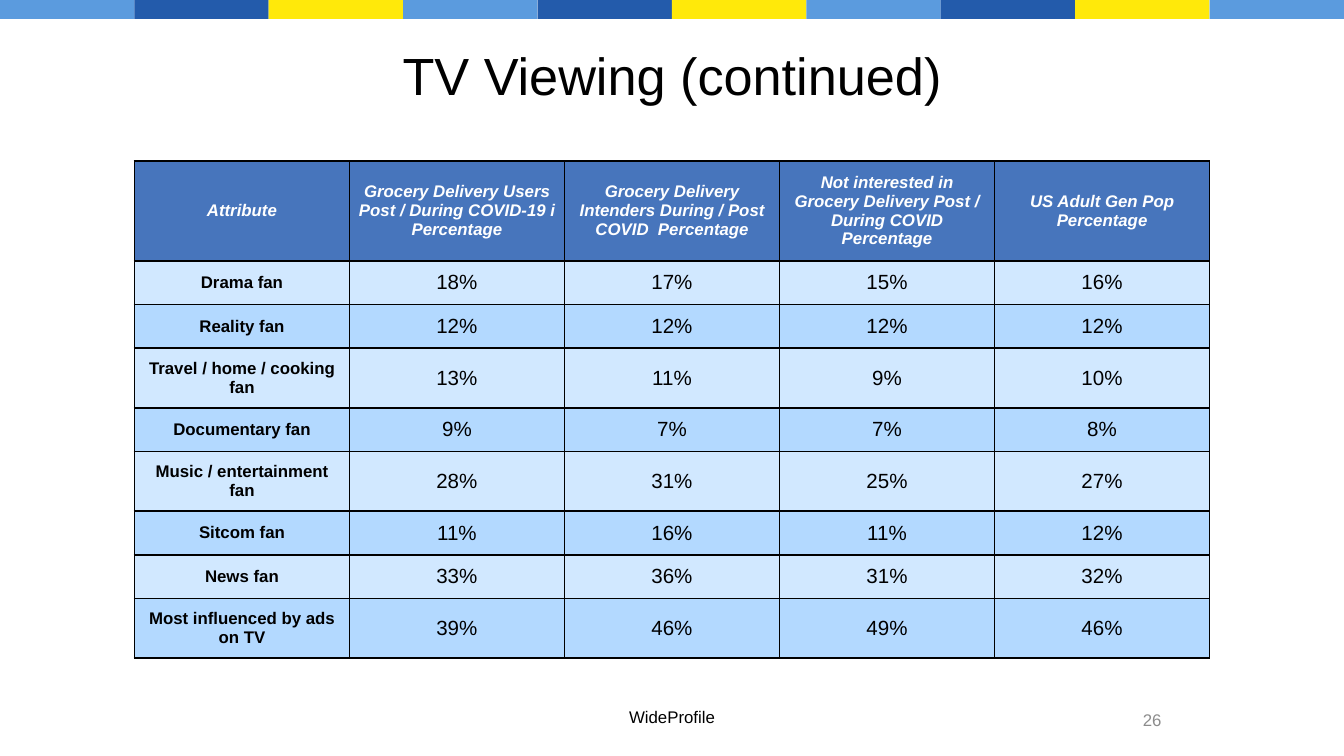
from dataclasses import dataclass

from lxml.etree import SubElement
from pptx import Presentation
from pptx.dml.color import RGBColor
from pptx.enum.shapes import MSO_SHAPE
from pptx.enum.text import MSO_ANCHOR, PP_ALIGN
from pptx.oxml.ns import qn
from pptx.util import Cm, Pt


@dataclass(frozen=True)
class Theme:
    font: str = "Arial"
    stripes: tuple = ("5B9BDE", "235BAB", "FFE90A")
    header: str = "4775BC"
    bands: tuple = ("D1E8FF", "B3D9FF")
    text: str = "000000"
    inverse: str = "FFFFFF"
    muted: str = "8C8C8C"
    title_size: int = 28
    value_size: int = 11
    small_size: int = 9
    border: int = 1


THEME = Theme()

HEADERS = [
    "Attribute",
    "Grocery Delivery Users Post / During COVID-19 i Percentage",
    "Grocery Delivery Intenders During / Post COVID  Percentage",
    "Not interested in Grocery Delivery Post / During COVID Percentage",
    "US Adult Gen Pop Percentage",
]
VIEWERS = [
    ("Drama fan", 18, 17, 15, 16),
    ("Reality fan", 12, 12, 12, 12),
    ("Travel / home / cooking fan", 13, 11, 9, 10),
    ("Documentary fan", 9, 7, 7, 8),
    ("Music / entertainment fan", 28, 31, 25, 27),
    ("Sitcom fan", 11, 16, 11, 12),
    ("News fan", 33, 36, 31, 32),
    ("Most influenced by ads on TV", 39, 46, 49, 46),
]
HEADER_HEIGHT, ROW_HEIGHT, TALL_ROW_HEIGHT = 1.78, 0.78, 1.07
LONGEST_SINGLE_LINE = 20


def write(tf, text, size, color, align=PP_ALIGN.CENTER, bold=False, italic=False):
    tf.word_wrap = True
    p = tf.paragraphs[0]
    p.text = text
    p.alignment = align
    for r in p.runs:
        font = r.font
        font.name, font.size = THEME.font, Pt(size)
        font.bold, font.italic = bold, italic
        font.color.rgb = RGBColor.from_string(color)


def add_label(s, box, text, size, color, align=PP_ALIGN.CENTER, anchor=MSO_ANCHOR.MIDDLE):
    tf = s.shapes.add_textbox(*map(Cm, box)).text_frame
    tf.vertical_anchor = anchor
    write(tf, text, size, color, align)


def add_stripes(s, box, count=10):
    left, top, width, height = box
    step = width / count
    for i in range(count):
        sp = s.shapes.add_shape(MSO_SHAPE.RECTANGLE, Cm(left + i * step), Cm(top),
                                Cm(step), Cm(height))
        sp.shadow.inherit = False
        sp.fill.solid()
        sp.fill.fore_color.rgb = RGBColor.from_string(THEME.stripes[i % len(THEME.stripes)])
        sp.line.fill.background()


def style_cell(cell, fill):
    """Set insets, a border on all four sides and the fill."""
    cell.vertical_anchor = MSO_ANCHOR.MIDDLE
    cell.margin_left = cell.margin_right = Cm(0.18)
    cell.margin_top = cell.margin_bottom = Cm(0.18)
    tc_pr = cell._tc.get_or_add_tcPr()
    for side in ("a:lnL", "a:lnR", "a:lnT", "a:lnB"):
        ln = SubElement(tc_pr, qn(side), w=str(Pt(THEME.border)))
        solid = SubElement(ln, qn("a:solidFill"))
        SubElement(solid, qn("a:srgbClr"), val=THEME.text)
    cell.fill.solid()
    cell.fill.fore_color.rgb = RGBColor.from_string(fill)


def add_viewing_table(s, box):
    left, top, width, _ = box
    heights = [HEADER_HEIGHT] + [
        TALL_ROW_HEIGHT if len(name) > LONGEST_SINGLE_LINE else ROW_HEIGHT
        for name, *_ in VIEWERS
    ]
    table = s.shapes.add_table(len(heights), len(HEADERS), Cm(left), Cm(top),
                               Cm(width), Cm(sum(heights))).table
    for column in table.columns:
        column.width = Cm(width / len(HEADERS))
    for row, height in zip(table.rows, heights):
        row.height = Cm(height)

    for c, header in enumerate(HEADERS):
        cell = table.cell(0, c)
        style_cell(cell, THEME.header)
        write(cell.text_frame, header, THEME.small_size, THEME.inverse, bold=True, italic=True)
    for r, (name, *shares) in enumerate(VIEWERS):
        for c, text in enumerate([name] + [f"{share}%" for share in shares]):
            cell = table.cell(r + 1, c)
            style_cell(cell, THEME.bands[r % 2])
            size = THEME.value_size if c else THEME.small_size
            write(cell.text_frame, text, size, THEME.text, bold=c == 0)


def add_footer(s, box):
    left, top, width, height = box
    add_label(s, (left + (width - 3.94) / 2, top, 3.94, 0.64), "WideProfile",
              THEME.small_size, THEME.text, anchor=MSO_ANCHOR.TOP)
    add_label(s, (left + width - 6.45, top, 3.25, height), "26",
              THEME.small_size, THEME.muted, align=PP_ALIGN.RIGHT)


def main():
    prs = Presentation()
    prs.slide_width, prs.slide_height = Cm(25.4), Cm(14.29)
    s = prs.slides.add_slide(prs.slide_layouts[6])
    add_stripes(s, (0, 0, 25.4, 0.36))
    add_label(s, (1.27, 0.58, 22.86, 1.65), "TV Viewing (continued)",
              THEME.title_size, THEME.text)
    add_viewing_table(s, (2.54, 3.04, 20.32, 8.9))
    add_footer(s, (0, 13.23, 25.4, 0.76))
    prs.save("out.pptx")


if __name__ == "__main__":
    main()
